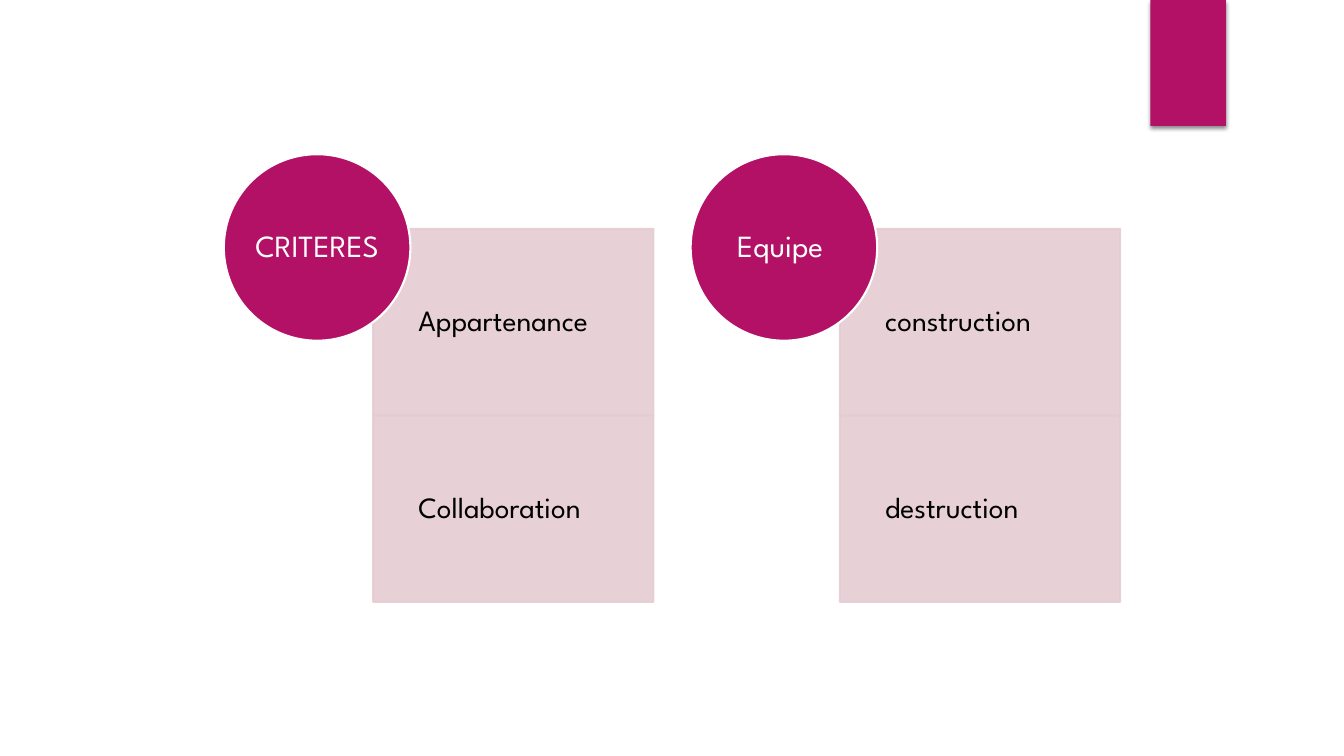
from lxml import etree
from pptx import Presentation
from pptx.dml.color import RGBColor
from pptx.enum.shapes import MSO_SHAPE
from pptx.enum.text import MSO_ANCHOR, PP_ALIGN
from pptx.oxml import parse_xml
from pptx.oxml.ns import qn
from pptx.util import Inches, Pt

# Content
GROUPS = [
    ("CRITERES", ["Appartenance", "Collaboration"]),
    ("Equipe ", ["construction", "destruction"]),
]
COLORS = {"accent": "B31166", "panel": "E5CCD3", "dark": "000000", "light": "FFFFFF"}
FONT = "League Spartan"

# Layout in inches
LEFT, TOP, PITCH = 2.22, 1.53, 4.63
CIRCLE = 1.85
PANEL_DX, PANEL_DY = 1.48, 0.74
PANEL_W, PANEL_H = 2.78, 1.85


def add_block(slide, kind, box, fill, line=None, alpha=None):
    sp = slide.shapes.add_shape(kind, *map(Inches, box))
    sp.shadow.inherit = False
    sp.fill.solid()
    sp.fill.fore_color.rgb = RGBColor.from_string(COLORS[fill])
    if line:
        sp.line.color.rgb = RGBColor.from_string(COLORS[line])
        sp.line.width = Pt(1.5)
    else:
        sp.line.fill.background()
    if alpha:
        for clr in sp.element.spPr.iter(qn("a:srgbClr")):
            etree.SubElement(clr, qn("a:alpha"), val=str(alpha * 1000))
    return sp


def write(sp, label, size, color, align, insets):
    tf = sp.text_frame
    tf.word_wrap = True
    tf.vertical_anchor = MSO_ANCHOR.MIDDLE
    tf.margin_left, tf.margin_top, tf.margin_right, tf.margin_bottom = map(Inches, insets)
    p = tf.paragraphs[0]
    p.text = label
    p.alignment = align
    p.line_spacing = 0.9
    p.font.name = FONT
    p.font.size = Pt(size)
    p.font.color.rgb = RGBColor.from_string(COLORS[color])


prs = Presentation()
prs.slide_width, prs.slide_height = Inches(13.33), Inches(7.5)
slide = prs.slides.add_slide(prs.slide_layouts[6])

# Corner tab with a soft shadow below
tab = add_block(slide, MSO_SHAPE.RECTANGLE, (11.41, 0, 0.75, 1.25), "accent")
effects = tab.element.spPr.find(qn("a:effectLst"))
effects.append(parse_xml(
    '<a:outerShdw xmlns:a="http://schemas.openxmlformats.org/drawingml/2006/main"'
    ' blurRad="38100" dist="25400" dir="5400000" rotWithShape="0">'
    f'<a:srgbClr val="{COLORS["dark"]}"><a:alpha val="45000"/></a:srgbClr></a:outerShdw>'))

# Each group: stacked panels, then the heading circle on top
for i, (heading, items) in enumerate(GROUPS):
    x = LEFT + i * PITCH
    for j, item in enumerate(items):
        box = (x + PANEL_DX, TOP + PANEL_DY + j * PANEL_H, PANEL_W, PANEL_H)
        panel = add_block(slide, MSO_SHAPE.RECTANGLE, box, "panel", "panel", alpha=90)
        write(panel, item, 21, "dark", PP_ALIGN.LEFT, (0.45, 0.16, 0.16, 0.16))
    circle = add_block(slide, MSO_SHAPE.OVAL, (x, TOP, CIRCLE, CIRCLE), "accent", "light")
    write(circle, heading, 22, "light", PP_ALIGN.CENTER, (0, 0, 0, 0))

prs.save("out.pptx")
